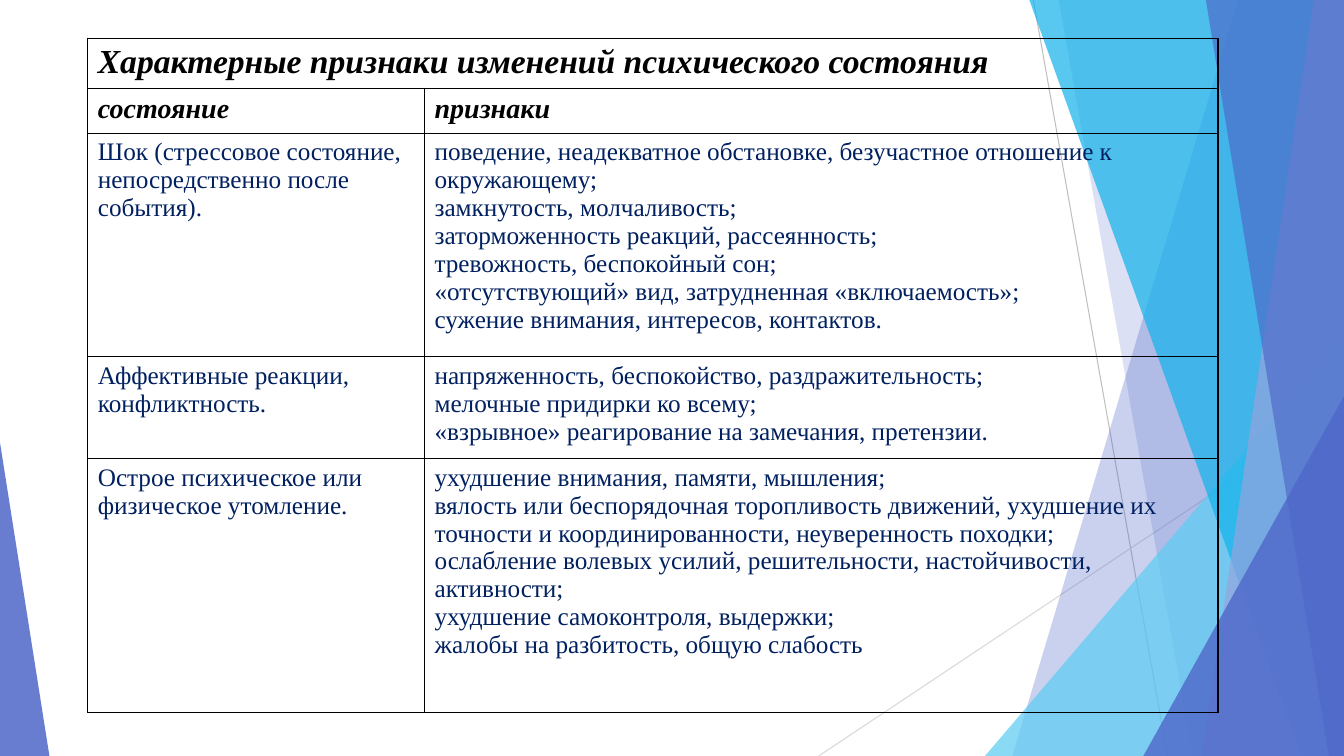
from lxml import etree
from pptx import Presentation
from pptx import util as u
from pptx.dml.color import RGBColor
from pptx.enum import shapes
from pptx.oxml import ns

WIDE, HIGH = u.Inches(13.33), u.Inches(7.5)
FONT = "Times New Roman"
BLUE, INK, NAVY = "4E67C8", "000000", "002060"
COLS = (25.06, 59.04)
ROWS = (6.67, 5.87, 29.6, 13.47, 33.6)
TITLE = "Характерные признаки изменений психического состояния"
HEADS = ("состояние", "признаки")
STATES = (
    ("Шок (стрессовое состояние, непосредственно после события).", (
        "поведение, неадекватное обстановке, безучастное отношение к окружающему;",
        "замкнутость, молчаливость;",
        "заторможенность реакций, рассеянность;",
        "тревожность, беспокойный сон;",
        "«отсутствующий» вид, затрудненная «включаемость»;",
        "сужение внимания, интересов, контактов.")),
    ("Аффективные реакции, конфликтность.", (
        "напряженность, беспокойство, раздражительность;",
        "мелочные придирки ко всему;",
        "«взрывное» реагирование на замечания, претензии.")),
    ("Острое психическое или физическое утомление.", (
        "ухудшение внимания, памяти, мышления;",
        "вялость или беспорядочная торопливость движений, ухудшение их "
        "точности и координированности, неуверенность походки;",
        "ослабление волевых усилий, решительности, настойчивости, активности;",
        "ухудшение самоконтроля, выдержки;",
        "жалобы на разбитость, общую слабость")),
)


def across(share):
    """Turn a percentage of the slide's width into a length."""
    return u.Emu(round(WIDE * share / 100))


def down(share):
    """Turn a percentage of the slide's height into a length."""
    return u.Emu(round(HIGH * share / 100))


def paint(form, tone):
    """Colour a font, fill or line format from a hex string."""
    form.rgb = RGBColor.from_string(tone)


def tint(shape, tone, alpha):
    """Give a shape a see-through fill without line or shadow."""
    shape.shadow.inherit = False
    shape.line.fill.background()
    shape.fill.solid()
    paint(shape.fill.fore_color, tone)
    color = shape.fill._xPr.find(".//" + ns.qn("a:srgbClr"))
    etree.SubElement(color, ns.qn("a:alpha"), val=str(alpha * 1000))


def ray(slide, start, end, tone):
    """Draw a thin line between two points."""
    line = slide.shapes.add_connector(
        shapes.MSO_CONNECTOR.STRAIGHT, across(start[0]), down(start[1]),
        across(end[0]), down(end[1]))
    line.line.width = u.Pt(0.75)
    paint(line.line.color, tone)
    etree.SubElement(line._element.spPr, ns.qn("a:effectLst"))


def wedge(slide, top, base, tone, alpha):
    """Fill the area from a slanted edge to the right side of the slide."""
    pen = slide.shapes.build_freeform(across(top), 0)
    pen.add_line_segments([(WIDE, 0), (WIDE, HIGH), (across(base), HIGH)])
    tint(pen.convert_to_shape(), tone, alpha)


def peak(slide, left, right, top, apex, tone, alpha):
    """Stand a right-angled triangle on the bottom of the slide."""
    shape = slide.shapes.add_shape(
        shapes.MSO_SHAPE.ISOSCELES_TRIANGLE, across(left), down(top),
        across(right - left), down(100 - top))
    shape.adjustments[0] = apex
    tint(shape, tone, alpha)


def frame(cell):
    """Rule a cell on all four sides and leave it unfilled."""
    props = cell._tc.get_or_add_tcPr()
    for side in "LRTB":
        edge = etree.SubElement(props, ns.qn("a:ln" + side), w=str(u.Pt(1)))
        fill = etree.SubElement(edge, ns.qn("a:solidFill"))
        etree.SubElement(fill, ns.qn("a:srgbClr"), val=INK)
    cell.fill.background()


def write(cell, lines, size, tone, strong):
    """Put lines of text into a cell, one paragraph each."""
    cell.text = "\n".join(lines)
    for para in cell.text_frame.paragraphs:
        font = para.font
        font.name, font.size = FONT, u.Pt(size)
        font.bold = font.italic = strong
        paint(font.color, tone)


def chart(slide):
    """Build the table of states and their signs."""
    table = slide.shapes.add_table(
        len(ROWS), len(COLS), across(6.53), down(5.07),
        across(sum(COLS)), down(sum(ROWS))).table
    table.first_row = table.horz_banding = False
    for col, share in zip(table.columns, COLS):
        col.width = across(share)
    for row, share in zip(table.rows, ROWS):
        row.height = down(share)
    for cell in table.iter_cells():
        frame(cell)
    table.cell(0, 0).merge(table.cell(0, 1))
    write(table.cell(0, 0), [TITLE], 24, INK, True)
    for col, head in enumerate(HEADS):
        write(table.cell(1, col), [head], 20, INK, True)
    for row, (state, signs) in enumerate(STATES, 2):
        write(table.cell(row, 0), [state], 18, NAVY, False)
        write(table.cell(row, 1), signs, 18, NAVY, False)


def main():
    """Build and save the slide."""
    deck = Presentation()
    deck.slide_width, deck.slide_height = WIDE, HIGH
    slide = deck.slides.add_slide(deck.slide_layouts[6])
    ray(slide, (76.89, 0), (86.87, 100), "BFBFBF")
    ray(slide, (100, 53.73), (60.92, 100), "D9D9D9")
    wedge(slide, 92.12, 75.32, BLUE, 30)
    wedge(slide, 78.77, 88.75, BLUE, 20)
    peak(slide, 73.29, 100, 44.4, 1, "5ECCF3", 72)
    wedge(slide, 76.59, 96.85, "12B2EB", 70)
    wedge(slide, 97.75, 89.42, "95A4DE", 70)
    wedge(slide, 89.72, 98.87, BLUE, 65)
    peak(slide, 85.07, 100, 52.4, 1, BLUE, 80)
    peak(slide, 0, 3.68, 58.53, 0, BLUE, 85)
    chart(slide)
    deck.save("out.pptx")


if __name__ == "__main__":
    main()
